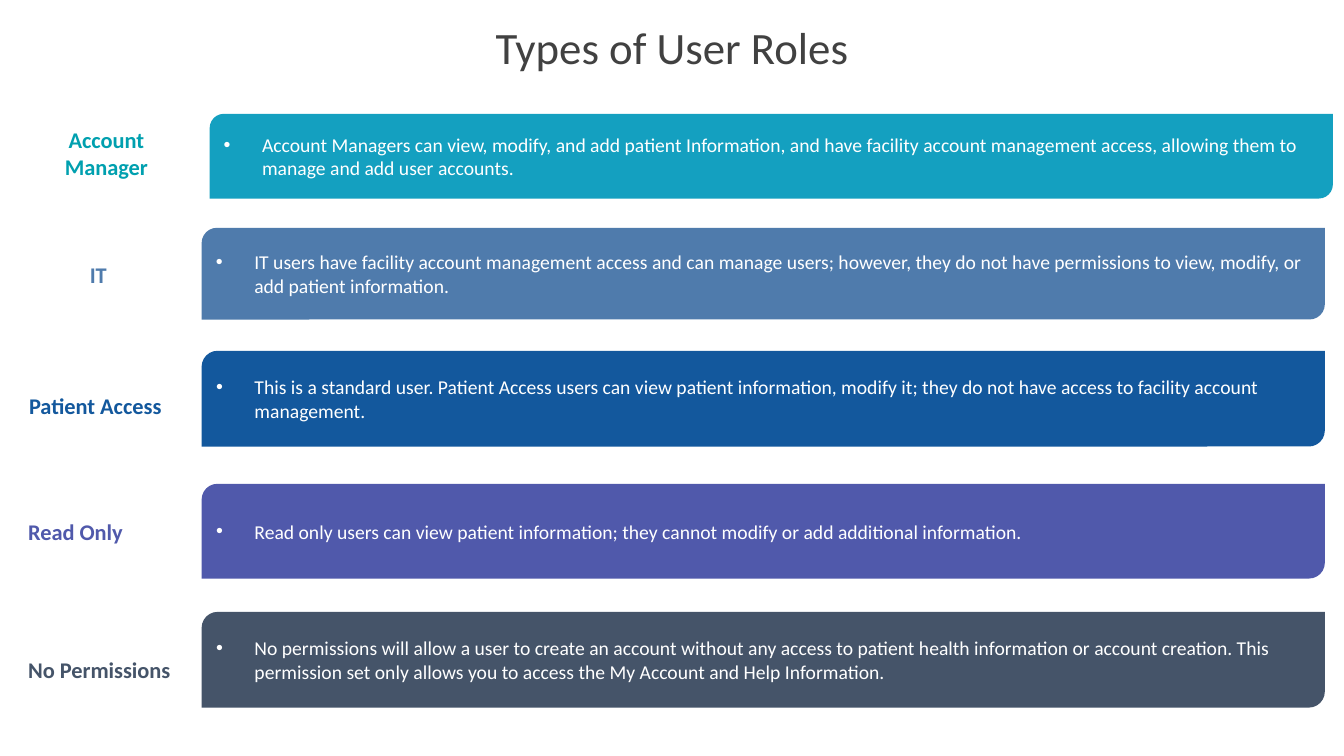
from dataclasses import dataclass

from lxml.etree import SubElement
from pptx import Presentation
from pptx.dml.color import RGBColor
from pptx.enum.shapes import MSO_SHAPE
from pptx.enum.text import MSO_ANCHOR, PP_ALIGN
from pptx.oxml.ns import qn
from pptx.util import Inches, Pt


@dataclass(frozen=True)
class Theme:
    font: str = "Calibri"
    title_size: int = 32
    label_size: int = 16
    body_size: int = 14
    title: str = "414141"
    white: str = "FFFFFF"
    account_label: str = "00A0AF"
    account: str = "14A0C0"
    it: str = "4F7BAC"
    patient: str = "13589D"
    read_only: str = "5059AB"
    no_permissions: str = "455469"


theme = Theme()


def write_text(box, text, size, color, bold=False, align=PP_ALIGN.LEFT,
               anchor=MSO_ANCHOR.MIDDLE, bullet=False):
    frame = box.text_frame
    frame.word_wrap = True
    frame.vertical_anchor = anchor
    para = frame.paragraphs[0]
    para.alignment = align
    if bullet:
        properties = para._p.get_or_add_pPr()
        properties.set("marL", str(Inches(0.38)))
        properties.set("indent", str(Inches(-0.38)))
        SubElement(properties, qn("a:buFont"), typeface="Arial")
        SubElement(properties, qn("a:buChar"), char="•")
    span = para.add_run()
    span.text = text
    font_format = {"name": theme.font, "size": Pt(size), "bold": bold}
    for name, value in font_format.items():
        setattr(span.font, name, value)
    span.font.color.rgb = RGBColor.from_string(color)
    return para


deck = Presentation()
deck.slide_width, deck.slide_height = Inches(13.33), Inches(7.5)
page = deck.slides.add_slide(deck.slide_layouts[6])

# Title
title_box = page.shapes.add_textbox(*map(Inches, (0.62, 0.21, 12.09, 0.99)))
title_para = write_text(title_box, "Types of User Roles", theme.title_size, theme.title,
                        align=PP_ALIGN.CENTER, anchor=MSO_ANCHOR.TOP)
for name, value in {"line_spacing": 0.9, "space_after": Pt(6)}.items():
    setattr(title_para, name, value)

# Roles: label, label place, alignment, label colour, bar left, top, height, bar colour, text
roles = [
    ("Account Manager", (0.25, 1.17, 1.61, 0.7), PP_ALIGN.CENTER, theme.account_label,
     2.08, 1.13, 0.84, theme.account,
     "Account Managers can view, modify, and add patient Information, and have facility "
     "account management access, allowing them to manage and add user accounts."),
    ("IT", (0.19, 2.47, 1.57, 0.51), PP_ALIGN.CENTER, theme.it,
     2, 2.26, 0.91, theme.it,
     "IT users have facility account management access and can manage users; however, "
     "they do not have permissions to view, modify, or add patient information."),
    ("Patient Access", (0.19, 3.66, 1.57, 0.72), PP_ALIGN.LEFT, theme.patient,
     2, 3.48, 0.95, theme.patient,
     "This is a standard user. Patient Access users can view patient information, modify "
     "it; they do not have access to facility account management."),
    ("Read Only", (0.18, 4.92, 1.61, 0.7), PP_ALIGN.LEFT, theme.read_only,
     2, 4.8, 0.94, theme.read_only,
     "Read only users can view patient information; they cannot modify or add additional "
     "information."),
    ("No Permissions", (0.18, 6.29, 1.71, 0.7), PP_ALIGN.LEFT, theme.no_permissions,
     2, 6.07, 0.95, theme.no_permissions,
     "No permissions will allow a user to create an account without any access to patient "
     "health information or account creation. This permission set only allows you to "
     "access the My Account and Help Information."),
]
bar_width = 11.14

for label, place, align, label_color, left, top, height, bar_color, text in roles:
    label_box = page.shapes.add_textbox(*map(Inches, place))
    write_text(label_box, label, theme.label_size, label_color, bold=True, align=align)

    bar = page.shapes.add_shape(MSO_SHAPE.ROUND_2_DIAG_RECTANGLE,
                                *map(Inches, (left, top, bar_width, height)))
    bar.shadow.inherit = False
    bar.fill.solid()
    bar.fill.fore_color.rgb = RGBColor.from_string(bar_color)
    bar.line.fill.background()
    write_text(bar, text, theme.body_size, theme.white, bullet=True)

deck.save("out.pptx")
